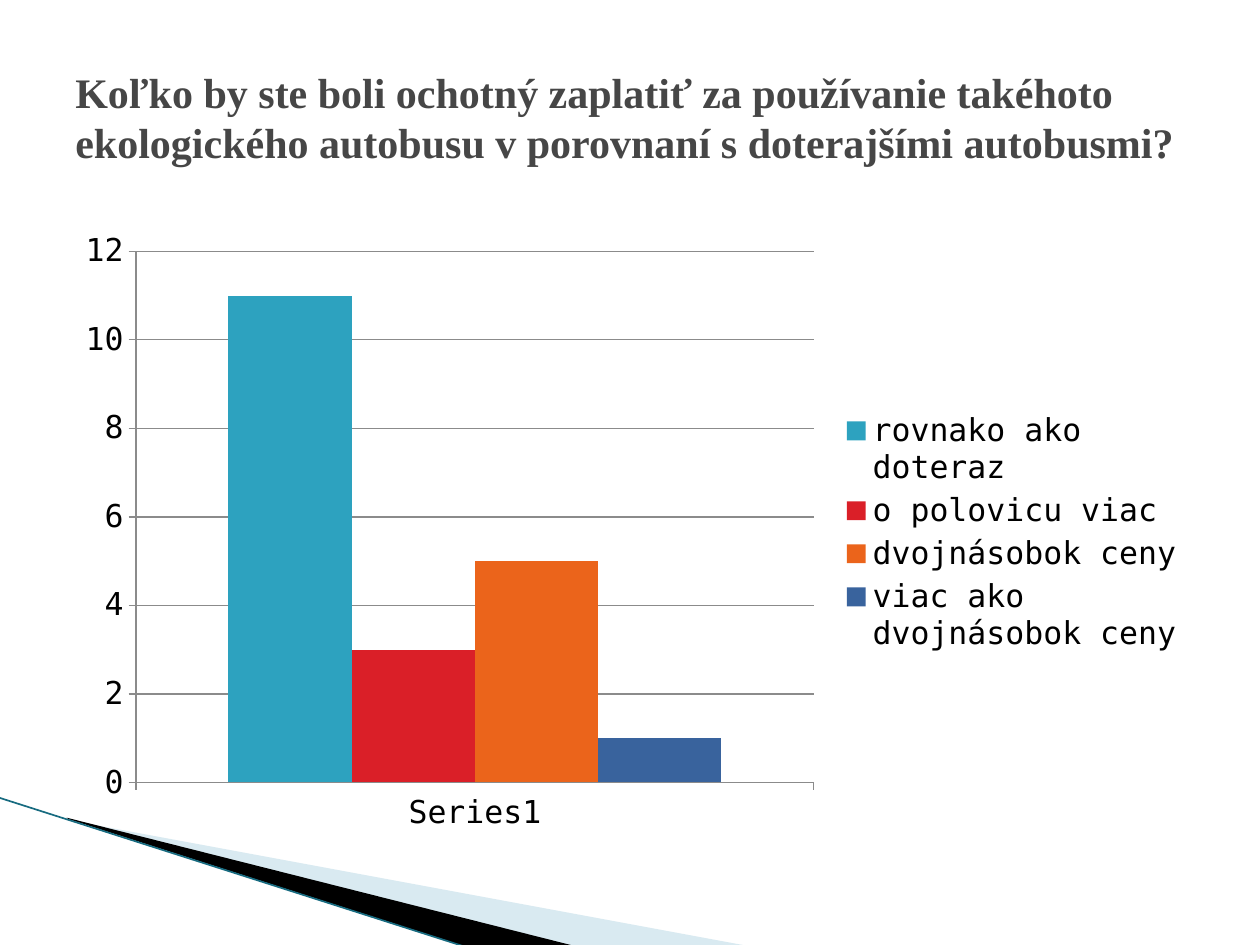
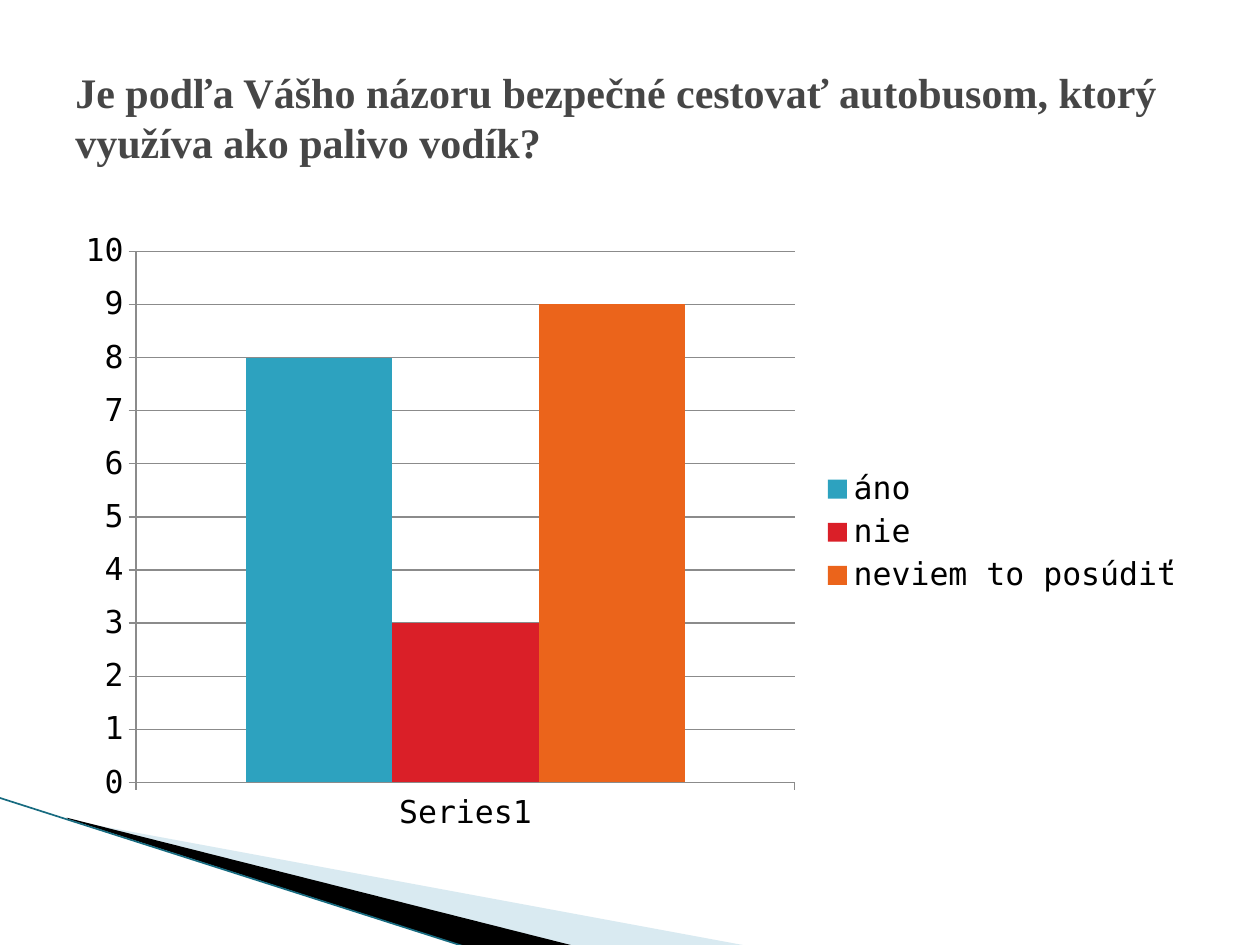
"""Build two survey slides, each with a question and a column chart."""
from lxml import etree
from pptx import Presentation
from pptx.chart.data import CategoryChartData
from pptx.dml.color import RGBColor
from pptx.enum.chart import XL_CHART_TYPE, XL_LEGEND_POSITION, XL_TICK_MARK
from pptx.enum.shapes import MSO_CONNECTOR
from pptx.enum.text import MSO_ANCHOR
from pptx.oxml.ns import qn
from pptx.util import Inches, Pt

COLUMN = XL_CHART_TYPE.COLUMN_CLUSTERED
RIGHT = XL_LEGEND_POSITION.RIGHT
OUTSIDE = XL_TICK_MARK.OUTSIDE
STRAIGHT = MSO_CONNECTOR.STRAIGHT
MIDDLE = MSO_ANCHOR.MIDDLE

COLORS = {"title": "464646", "text": "000000", "grid": "8B8B8B",
          "pale": "A0CBDC", "dark": "000000", "edge": "176B80"}
BARS = ["2DA2BF", "DA1F28", "EB641B", "39639D"]
TITLE = {"name": "Times New Roman", "size": Pt(24), "bold": True}
LABEL = {"name": "DejaVu Sans Mono", "size": Pt(18), "bold": False}

PALE = [(0.55, 6.51), (5.95, 7.51), (4.56, 7.51), (0.55, 6.5)]
DARK = [(0.53, 6.49), (4.57, 7.51), (3.72, 7.52), (0.54, 6.5)]

POLLS = [
    ("Koľko by ste boli ochotný zaplatiť za používanie takéhoto "
     "ekologického autobusu v porovnaní s doterajšími autobusmi?",
     {"rovnako ako doteraz": 11, "o polovicu viac": 3,
      "dvojnásobok ceny": 5, "viac ako dvojnásobok ceny": 1}, 12, 2),
    ("Je podľa Vášho názoru bezpečné cestovať autobusom, ktorý "
     "využíva ako palivo vodík?",
     {"áno": 8, "nie": 3, "neviem to posúdiť": 9}, 10, 1),
]


def rgb(tint):
    return RGBColor.from_string(tint)


def apply(item, style):
    for key, value in style.items():
        setattr(item, key, value)


class Deck:
    """Hold the deck's style and its current slide."""

    def __init__(self):
        self.file = Presentation()
        apply(self.file, {"slide_width": Inches(10), "slide_height": Inches(7.5)})
        self.slide = None

    def page(self):
        self.slide = self.file.slides.add_slide(self.file.slide_layouts[6])
        self.wedge(PALE, (0.78, 5.47, 4.16, 1.58), "pale", 40)
        self.wedge(DARK, (-0.06, 6.33, 4.16, 0.92), "dark")
        self.line((-0.01, 6.33), (3.71, 7.52), "edge")

    def font(self, font, style, color):
        apply(font, style)
        font.color.rgb = rgb(COLORS[color])

    def wedge(self, points, frame, color, alpha=100):
        spots = [(Inches(x), Inches(y)) for x, y in points]
        form = self.slide.shapes.build_freeform(*spots[0], scale=1.0)
        form.add_line_segments(spots[1:], close=True)
        shape = form.convert_to_shape()
        self.reframe(shape, [Inches(n) for n in frame])
        shape.shadow.inherit = False
        shape.line.fill.background()
        shape.fill.solid()
        shape.fill.fore_color.rgb = rgb(COLORS[color])
        if alpha < 100:
            tint = shape.element.spPr.find(".//" + qn("a:srgbClr"))
            etree.SubElement(tint, qn("a:alpha"), val=str(alpha * 1000))

    def reframe(self, shape, frame):
        left, top, width, height = frame
        for spot in shape.element.iter(qn("a:pt")):
            spot.set("x", str(int(spot.get("x")) + shape.left - left))
            spot.set("y", str(int(spot.get("y")) + shape.top - top))
        for trace in shape.element.iter(qn("a:path")):
            trace.set("w", str(width))
            trace.set("h", str(height))
        apply(shape, {"left": left, "top": top, "width": width, "height": height})

    def line(self, start, end, color):
        ends = [Inches(n) for n in start + end]
        link = self.slide.shapes.add_connector(STRAIGHT, *ends)
        link.line.width = Pt(0.95)
        link.line.color.rgb = rgb(COLORS[color])
        etree.SubElement(link.element.spPr, qn("a:effectLst"))

    def title(self, text):
        box = self.slide.shapes.add_textbox(
            Inches(0.5), Inches(0.3), Inches(9), Inches(1.25))
        frame = box.text_frame
        apply(frame, {"word_wrap": True, "vertical_anchor": MIDDLE, "text": text})
        self.font(frame.paragraphs[0].runs[0].font, TITLE, "title")

    def chart(self, votes, top, step):
        data = CategoryChartData()
        data.categories = ["Series1"]
        for name, count in votes.items():
            data.add_series(name, [count])
        chart = self.slide.shapes.add_chart(
            COLUMN, Inches(0.5), Inches(1.75), Inches(9), Inches(4.95), data).chart
        self.font(chart.font, LABEL, "text")
        apply(chart, {"has_title": False, "has_legend": True})
        apply(chart.legend, {"position": RIGHT, "include_in_layout": False})
        plot = chart.plots[0]
        apply(plot, {"gap_width": 150, "overlap": 0, "vary_by_categories": False})
        for bar, tint in zip(plot.series, BARS):
            bar.format.fill.solid()
            bar.format.fill.fore_color.rgb = rgb(tint)
        scale = chart.value_axis
        apply(scale, {"minimum_scale": 0, "maximum_scale": top,
                      "major_unit": step, "has_major_gridlines": True})
        for axis in (scale, chart.category_axis):
            axis.major_tick_mark = OUTSIDE
            axis.format.line.color.rgb = rgb(COLORS["grid"])
        scale.major_gridlines.format.line.color.rgb = rgb(COLORS["grid"])


def main():
    deck = Deck()
    for text, votes, top, step in POLLS:
        deck.page()
        deck.title(text)
        deck.chart(votes, top, step)
    deck.file.save("out.pptx")


if __name__ == "__main__":
    main()
